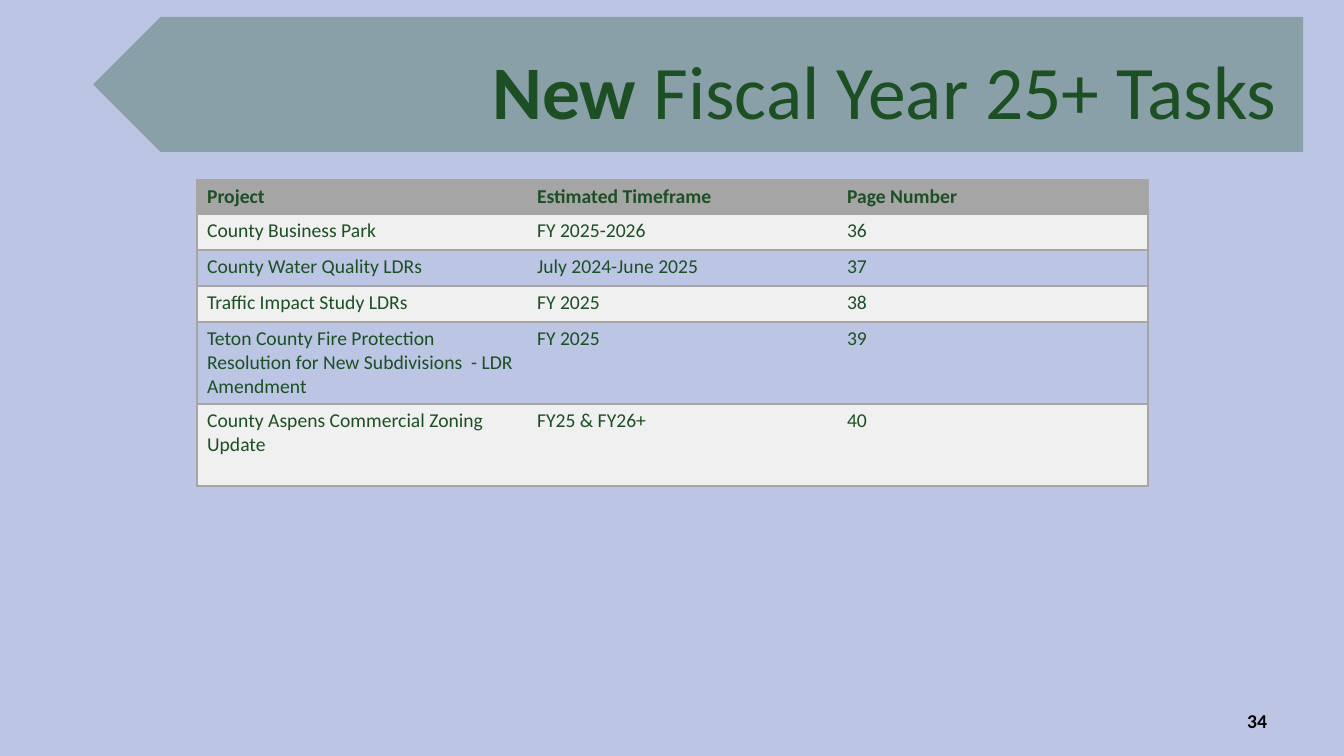
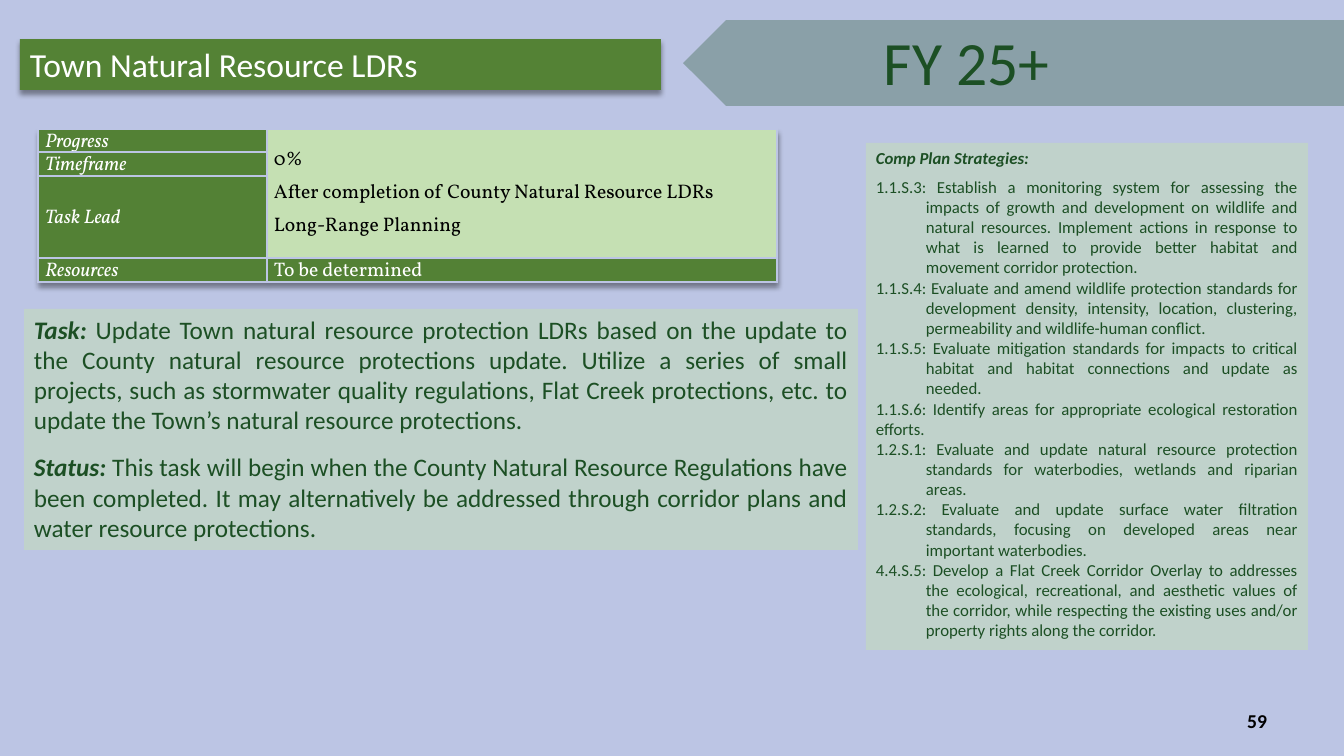
from lxml.etree import SubElement
from pptx import Presentation
from pptx.dml.color import RGBColor
from pptx.enum.shapes import MSO_SHAPE
from pptx.enum.text import MSO_ANCHOR, PP_ALIGN
from pptx.oxml.ns import qn
from pptx.util import Emu, Pt

SLIDE_W, SLIDE_H = 1344, 756
SCALE = 12192000 / SLIDE_W
COLORS = {
    "background": "BCC5E4", "ink": "1C4F24", "white": "FFFFFF", "black": "000000",
    "gray": "A5A5A5", "stripe": "F0F0F0", "bar": "548235", "label": "538135",
    "panel": "C5E0B4", "summary": "C5E0B3",
}
BODY_FONT, FACTS_FONT = "Calibri", "Vollkorn"

# Content: runs are (text, emphasised)
TASKS_TITLE = [("New", True), (" Fiscal Year 25+ Tasks", False)]
TASKS_PAGE, PROJECT_PAGE = "34", "59"
TASKS = [
    ("Project", "Estimated Timeframe", "Page Number"),
    ("County Business Park", "FY 2025-2026", "36"),
    ("County Water Quality LDRs", "July 2024-June 2025", "37"),
    ("Traffic Impact Study LDRs", "FY 2025", "38"),
    ("Teton County Fire Protection Resolution for New Subdivisions  - LDR Amendment",
     "FY 2025", "39"),
    ("County Aspens Commercial Zoning Update", "FY25 & FY26+", "40"),
]
TASK_COLS = [330, 310, 311]
TASK_ROWS = [34, 36, 36, 36, 82, 82]

PROJECT = "Town Natural Resource LDRs"
YEAR = "FY 25+"
FACT_LABELS = ["Progress", "Timeframe", "Task Lead", "Resources"]
FACT_SUMMARY = ["0%", "After completion of County Natural Resource LDRs", "Long-Range Planning"]
FACT_RESOURCES = "To be determined"
FACT_COLS = [229, 510]
FACT_ROWS = [23, 24, 82, 24]
DESCRIPTION = [
    [("Task: ", True),
     ("Update Town natural resource protection LDRs based on the update to the County "
      "natural resource protections update. Utilize a series of small projects, such as "
      "stormwater quality regulations, Flat Creek protections, etc. to update the Town’s "
      "natural resource protections.", False)],
    [("Status:", True),
     (" This task will begin when the County Natural Resource Regulations have been "
      "completed. It may alternatively be addressed through corridor plans and water "
      "resource protections.", False)],
]
STRATEGIES_HEADING = "Comp Plan Strategies:"
# (text, hanging indent)
STRATEGIES = [
    ("1.1.S.3: Establish a monitoring system for assessing the impacts of growth and "
     "development on wildlife and natural resources. Implement actions in response to what "
     "is learned to provide better habitat and movement corridor protection.", True),
    ("1.1.S.4: Evaluate and amend wildlife protection standards for development density, "
     "intensity, location, clustering, permeability and wildlife-human conflict.", True),
    ("1.1.S.5: Evaluate mitigation standards for impacts to critical habitat and habitat "
     "connections and update as needed.", True),
    ("1.1.S.6: Identify areas for appropriate ecological restoration efforts.", False),
    ("1.2.S.1: Evaluate and update natural resource protection standards for waterbodies, "
     "wetlands and riparian areas.", True),
    ("1.2.S.2: Evaluate and update surface water filtration standards, focusing on developed "
     "areas near important waterbodies.", True),
    ("4.4.S.5: Develop a Flat Creek Corridor Overlay to addresses the ecological, "
     "recreational, and aesthetic values of the corridor, while respecting the existing uses "
     "and/or property rights along the corridor.", True),
]


def px(*lengths):
    return [Emu(round(n * SCALE)) for n in lengths]


def rgb(name):
    return RGBColor.from_string(COLORS[name])


def add_slide(prs, page):
    slide = prs.slides.add_slide(prs.slide_layouts[6])
    slide.background.fill.solid()
    slide.background.fill.fore_color.rgb = rgb("background")
    number = add_text(slide, (964, 701, 313, 40), MSO_ANCHOR.MIDDLE)
    write(number.paragraphs[0], page, 14, "black", bold=True, align=PP_ALIGN.RIGHT)
    return slide


def add_text(slide, box, anchor=MSO_ANCHOR.TOP, wrap=True):
    frame = slide.shapes.add_textbox(*px(*box)).text_frame
    frame.word_wrap = wrap
    frame.vertical_anchor = anchor
    return frame


def next_paragraph(frame):
    first = frame.paragraphs[0]
    return frame.add_paragraph() if first.runs else first


def write(paragraph, content, size, color, font=BODY_FONT, bold=False, italic=False,
          align=PP_ALIGN.LEFT, after=0):
    """Write a string, or a list of (text, emphasised) runs shown in bold."""
    paragraph.alignment = align
    paragraph.space_after = Pt(after)
    style = paragraph.font
    style.name, style.size, style.color.rgb = font, Pt(size), rgb(color)
    if isinstance(content, str):
        style.bold, style.italic = bold, italic
        paragraph.add_run().text = content
        return
    for text, emphasised in content:
        run = paragraph.add_run()
        run.text = text
        run.font.bold = emphasised
        run.font.italic = emphasised and italic


def add_block(slide, kind, box, color, opacity=100):
    block = slide.shapes.add_shape(kind, *px(*box))
    block.shadow.inherit = False
    block.line.fill.background()
    block.fill.solid()
    block.fill.fore_color.rgb = rgb(color)
    if opacity < 100:
        tint = block._element.spPr.find(".//" + qn("a:srgbClr"))
        SubElement(tint, qn("a:alpha"), val=str(opacity * 1000))
    block.text_frame.word_wrap = True
    block.text_frame.vertical_anchor = MSO_ANCHOR.TOP
    return block


def add_banner(slide, box):
    add_block(slide, MSO_SHAPE.PENTAGON, box, "ink", 31).rotation = 180


def drop_shadow(effects):
    shadow = SubElement(effects, qn("a:outerShdw"), blurRad=str(Pt(4)), dist=str(Pt(3)),
                        dir="5400000", algn="t", rotWithShape="0")
    shade = SubElement(shadow, qn("a:srgbClr"), val=COLORS["black"])
    SubElement(shade, qn("a:alpha"), val="40000")


def add_grid(slide, left, top, cols, rows):
    box = px(left, top, sum(cols), sum(rows))
    table = slide.shapes.add_table(len(rows), len(cols), *box).table
    table.first_row = table.horz_banding = False
    for column, width in zip(table.columns, px(*cols)):
        column.width = width
    for row, height in zip(table.rows, px(*rows)):
        row.height = height
    return table


def style_cell(cell, fill, border, sides="LRTB"):
    properties = cell._tc.get_or_add_tcPr()
    for side in "LRTB":
        line = SubElement(properties, qn("a:ln" + side), w=str(Pt(1)))
        if side in sides:
            SubElement(SubElement(line, qn("a:solidFill")), qn("a:srgbClr"), val=COLORS[border])
        else:
            SubElement(line, qn("a:noFill"))
    cell.fill.solid()
    cell.fill.fore_color.rgb = rgb(fill)


def build_tasks(prs):
    slide = add_slide(prs, TASKS_PAGE)
    add_banner(slide, (93, 17, 1210, 135))
    title = add_text(slide, (77, 26, 1210, 126), MSO_ANCHOR.MIDDLE)
    write(title.paragraphs[0], TASKS_TITLE, 54, "ink", align=PP_ALIGN.RIGHT)

    # Task table: outer frame and row rules only
    table = add_grid(slide, 197, 180, TASK_COLS, TASK_ROWS)
    for r, task in enumerate(TASKS):
        fill = "gray" if r == 0 else ("background", "stripe")[r % 2]
        for c, text in enumerate(task):
            cell = table.cell(r, c)
            style_cell(cell, fill, "gray", ("LTB", "TB", "RTB")[c])
            write(cell.text_frame.paragraphs[0], text, 14, "ink", bold=r == 0)


def build_facts(slide):
    table = add_grid(slide, 38, 129, FACT_COLS, FACT_ROWS)
    effects = table._tbl.tblPr.makeelement(qn("a:effectLst"))
    table._tbl.tblPr.insert(0, effects)
    drop_shadow(effects)
    last = len(FACT_LABELS) - 1
    for r, label in enumerate(FACT_LABELS):
        for c in range(2):
            cell = table.cell(r, c)
            style_cell(cell, "summary" if c and r < last else "label", "background")
            cell.margin_left, cell.margin_right = px(7, 7)
            cell.margin_top = cell.margin_bottom = 0
            cell.vertical_anchor = MSO_ANCHOR.MIDDLE
            text = label if c == 0 else FACT_RESOURCES
            if c == 0 or r == last:
                line = cell.text_frame.paragraphs[0]
                line.line_spacing = 0.85
                write(line, text, 14, "white", FACTS_FONT, italic=c == 0)
    summary = table.cell(0, 1)
    summary.merge(table.cell(last - 1, 1))
    for text in FACT_SUMMARY:
        write(next_paragraph(summary.text_frame), text, 14, "black", FACTS_FONT, after=4)


def build_project(prs):
    slide = add_slide(prs, PROJECT_PAGE)

    # Project name bar
    bar = add_block(slide, MSO_SHAPE.RECTANGLE, (20, 39, 641, 51), "bar")
    drop_shadow(bar._element.spPr.find(qn("a:effectLst")))
    write(bar.text_frame.paragraphs[0], PROJECT, 24, "white")

    # Strategies panel
    panel = add_block(slide, MSO_SHAPE.RECTANGLE, (866, 143, 442, 507), "panel", 50).text_frame
    write(panel.paragraphs[0], STRATEGIES_HEADING, 12, "ink", bold=True, italic=True,
          align=PP_ALIGN.JUSTIFY, after=6)
    for text, hanging in STRATEGIES:
        strategy = panel.add_paragraph()
        if hanging:
            indent = px(50)[0]
            properties = strategy._p.get_or_add_pPr()
            properties.set("marL", str(indent))
            properties.set("indent", str(-indent))
        write(strategy, text, 12, "ink", align=PP_ALIGN.JUSTIFY)

    # Task and status panel
    panel = add_block(slide, MSO_SHAPE.RECTANGLE, (24, 309, 834, 241), "panel", 50).text_frame
    for runs in DESCRIPTION:
        write(next_paragraph(panel), runs, 18, "ink", italic=True,
              align=PP_ALIGN.JUSTIFY, after=12)

    build_facts(slide)

    # Fiscal year banner
    add_banner(slide, (683, 20, 661, 86))
    year = add_text(slide, (874, 19, 187, 85), wrap=False)
    write(year.paragraphs[0], YEAR, 44, "ink")


def main():
    prs = Presentation()
    prs.slide_width, prs.slide_height = px(SLIDE_W, SLIDE_H)
    build_tasks(prs)
    build_project(prs)
    prs.save("out.pptx")


if __name__ == "__main__":
    main()
